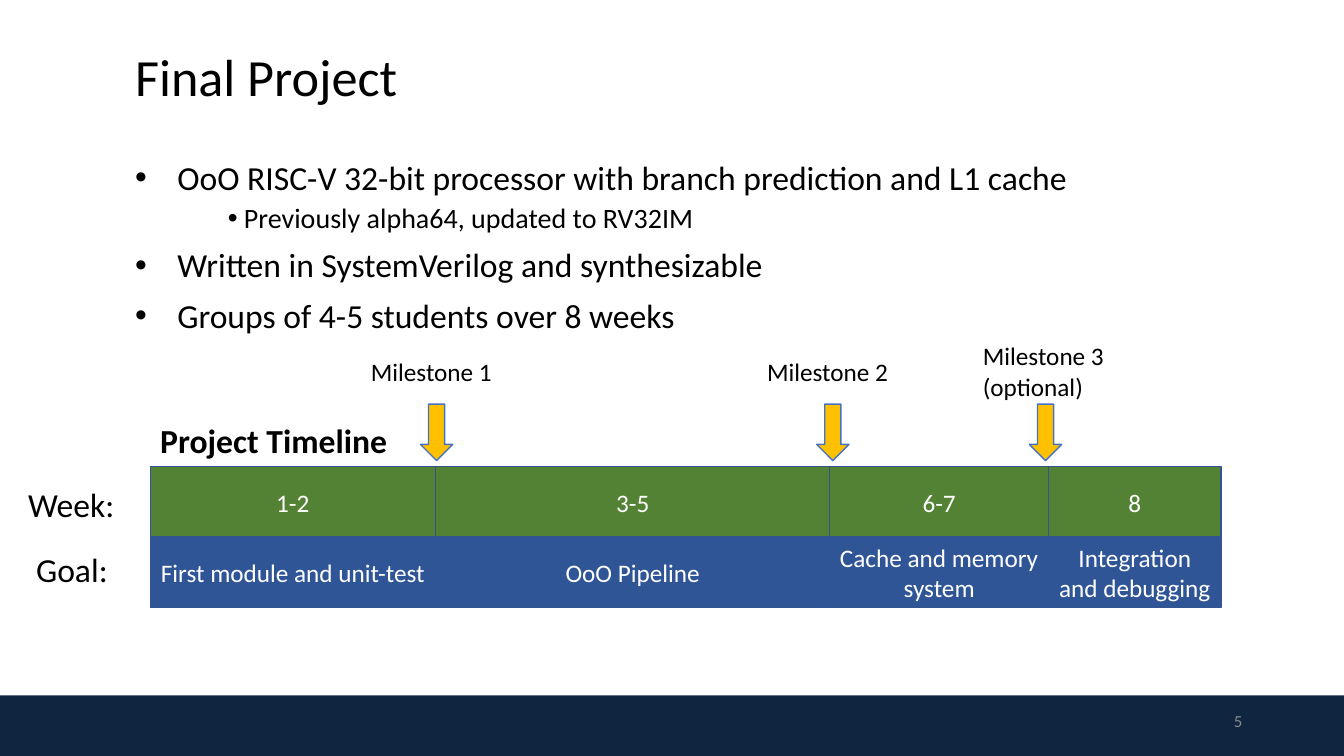
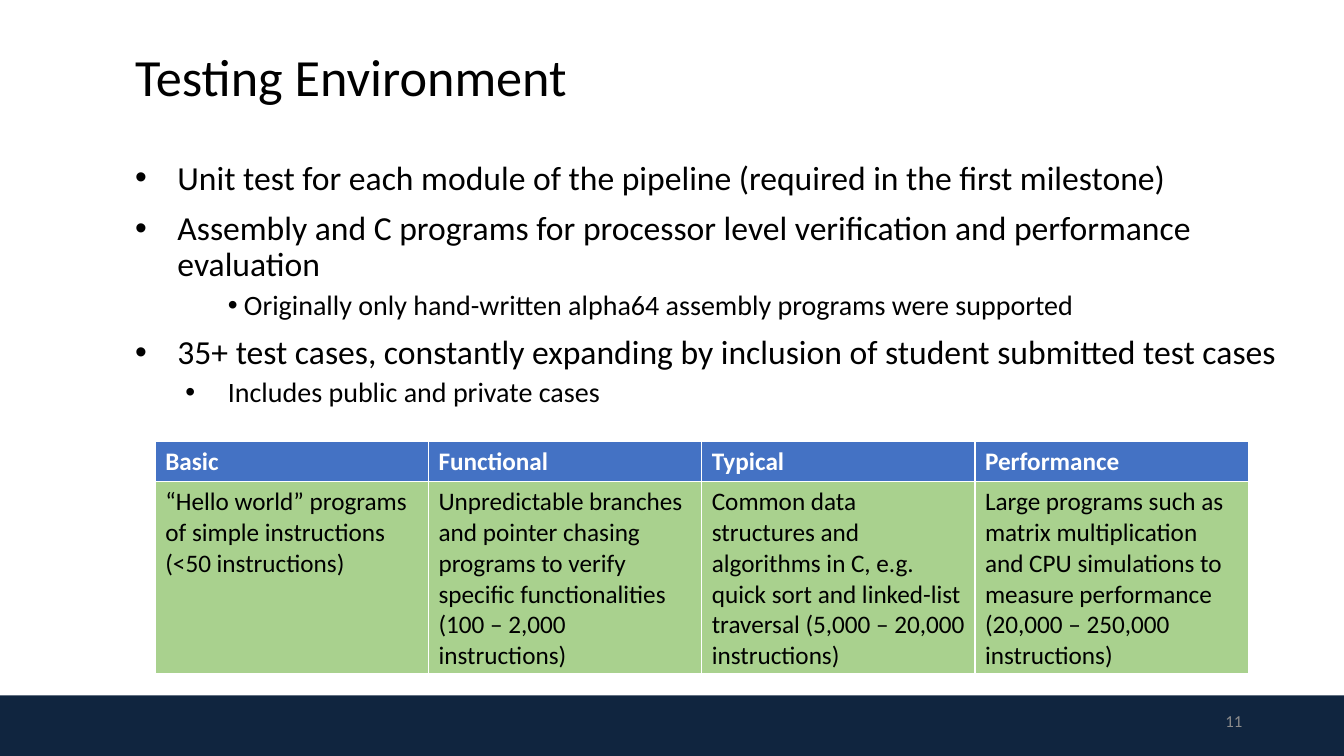
from lxml.etree import SubElement
from pptx import Presentation
from pptx.dml.color import RGBColor
from pptx.enum.shapes import MSO_SHAPE
from pptx.enum.text import MSO_ANCHOR, MSO_AUTO_SIZE, PP_ALIGN
from pptx.oxml.ns import qn
from pptx.util import Pt

EMU_PER_PX = 9144  # 100 px to the inch
FONT = "Calibri"
TITLE_ONLY = 5
COLORS = {
    "black": "000000", "white": "FFFFFF", "band": "10253F", "page": "8C8C8C",
    "week": "548235", "goal": "2F5597", "cell_line": "325491",
    "arrow": "FFC000", "blue": "4472C4", "table_body": "A9D18E",
}
# Bullet styles: left margin px, hanging px, size, space before
BULLETS = {
    "main": (42, 42, 24, 10),
    "sub": (92, 42, 20, 5),
    "tight": (108, 16, 20, 5),
}


def px(length):
    return length * EMU_PER_PX


def color(name):
    return RGBColor.from_string(COLORS[name])


def style(para, size, color_name="black", bold=False, align=PP_ALIGN.LEFT):
    para.alignment = align
    para.font.name = FONT
    para.font.size = Pt(size)
    para.font.bold = bold
    para.font.color.rgb = color(color_name)


def set_margins(frame, margin):
    frame.margin_left = frame.margin_right = px(margin)
    frame.margin_top = frame.margin_bottom = px(margin)


def add_text(slide, text, bounds, size, color_name="black", bold=False,
             align=PP_ALIGN.LEFT, anchor=MSO_ANCHOR.TOP):
    frame = slide.shapes.add_textbox(*map(px, bounds)).text_frame
    frame.word_wrap = True
    frame.vertical_anchor = anchor
    frame.text = text
    for para in frame.paragraphs:
        style(para, size, color_name, bold, align)


def add_block(slide, kind, bounds, fill, line=None, text=""):
    block = slide.shapes.add_shape(kind, *map(px, bounds))
    block.shadow.inherit = False
    block.fill.solid()
    block.fill.fore_color.rgb = color(fill)
    if line:
        block.line.color.rgb = color(line)
        block.line.width = Pt(1)
    else:
        block.line.fill.background()
    if text:
        frame = block.text_frame
        frame.word_wrap = True
        frame.vertical_anchor = MSO_ANCHOR.MIDDLE
        frame.text = text
        style(frame.paragraphs[0], 18, "white", align=PP_ALIGN.CENTER)


def add_page(deck, title, number):
    """Slide with the shared band, title and page number."""
    slide = deck.slides.add_slide(deck.slide_layouts[TITLE_ONLY])
    add_block(slide, MSO_SHAPE.RECTANGLE, (0, 690, 1334, 60), "band")
    box = slide.shapes.title
    box.left, box.top, box.width, box.height = map(px, (121, 36, 1171, 84))
    frame = box.text_frame
    frame.text = title
    frame.auto_size = MSO_AUTO_SIZE.NONE
    frame.vertical_anchor = MSO_ANCHOR.BOTTOM
    set_margins(frame, 13)
    frame.paragraphs[0].line_spacing = 0.9
    style(frame.paragraphs[0], 37.3)
    add_text(slide, str(number), (942, 695, 300, 40), 12, "page",
             align=PP_ALIGN.RIGHT, anchor=MSO_ANCHOR.MIDDLE)
    return slide


def add_bullets(slide, items):
    frame = slide.shapes.add_textbox(*map(px, (121, 147, 1171, 458))).text_frame
    frame.word_wrap = True
    set_margins(frame, 13)
    for index, (kind, text) in enumerate(items):
        margin, hanging, size, before = BULLETS[kind]
        para = frame.add_paragraph() if index else frame.paragraphs[0]
        para.text = text
        properties = para._p.get_or_add_pPr()
        properties.set("marL", str(px(margin)))
        properties.set("indent", str(-px(hanging)))
        SubElement(properties, qn("a:buFont")).set("typeface", "Arial")
        SubElement(properties, qn("a:buChar")).set("char", "•")
        para.line_spacing = 0.9
        para.space_before = Pt(before if index else 0)
        style(para, size)


def add_timeline(slide, phases):
    """Week cells above goal cells, with one column per phase."""
    top, height, left = 463, 70, 149
    for width, week, goal in phases:
        for row, (text, fill) in enumerate(((week, "week"), (goal, "goal"))):
            add_block(slide, MSO_SHAPE.RECTANGLE,
                      (left, top + row * height, width, height),
                      fill, "cell_line", text)
        left += width


def add_milestone(slide, arrow_left, label_left, label_top, text):
    add_block(slide, MSO_SHAPE.DOWN_ARROW, (arrow_left, 401, 32, 56),
              "arrow", "blue")
    add_text(slide, text, (label_left, label_top, 144, 40), 18)


def add_test_table(slide, columns):
    column_width, row_heights = 271, (40, 190)
    table = slide.shapes.add_table(
        2, len(columns), px(154), px(438),
        px(column_width * len(columns)), px(sum(row_heights))).table
    table.horz_banding = False
    for row, height in zip(table.rows, row_heights):
        row.height = px(height)
    looks = (("blue", "white", True), ("table_body", "black", False))
    for column, texts in enumerate(columns):
        table.columns[column].width = px(column_width)
        for row, (text, (fill, ink, bold)) in enumerate(zip(texts, looks)):
            cell = table.cell(row, column)
            cell.fill.solid()
            cell.fill.fore_color.rgb = color(fill)
            cell.text = text
            for para in cell.text_frame.paragraphs:
                style(para, 18, ink, bold)


def build_project(deck):
    slide = add_page(deck, "Final Project", 5)
    add_bullets(slide, [
        ("main", "OoO RISC-V 32-bit processor with branch prediction and L1 cache"),
        ("tight", "Previously alpha64, updated to RV32IM"),
        ("main", "Written in SystemVerilog and synthesizable"),
        ("main", "Groups of 4-5 students over 8 weeks"),
    ])
    # Timeline and its labels
    add_timeline(slide, [
        (283, "1-2", "First module and unit-test"),
        (391, "3-5", "OoO Pipeline"),
        (217, "6-7", "Cache and memory system"),
        (171, "8", "Integration and debugging"),
    ])
    add_text(slide, "Project Timeline", (149, 412, 255, 50), 24, bold=True)
    add_text(slide, "Week:", (18, 475, 115, 50), 24)
    add_text(slide, "Goal:", (26, 540, 100, 50), 24)
    # Milestones
    for milestone in (
        (417, 358, 349, "Milestone 1"),
        (810, 751, 349, "Milestone 2"),
        (1021, 965, 333, "Milestone 3\n(optional)"),
    ):
        add_milestone(slide, *milestone)


def build_testing(deck):
    slide = add_page(deck, "Testing Environment", 11)
    add_bullets(slide, [
        ("main", "Unit test for each module of the pipeline (required in the first milestone)"),
        ("main", "Assembly and C programs for processor level verification "
                 "and performance evaluation"),
        ("tight", "Originally only hand-written alpha64 assembly programs were supported"),
        ("main", "35+ test cases, constantly expanding by inclusion of "
                 "student submitted test cases"),
        ("sub", "Includes public and private cases"),
    ])
    add_test_table(slide, [
        ("Basic", "“Hello world” programs of simple instructions\n(<50 instructions)"),
        ("Functional", "Unpredictable branches and pointer chasing programs to verify "
                       "specific functionalities\n(100 – 2,000 instructions)"),
        ("Typical", "Common data structures and algorithms in C, e.g. quick sort and "
                    "linked-list traversal (5,000 – 20,000 instructions)"),
        ("Performance", "Large programs such as matrix multiplication and CPU simulations "
                        "to measure performance\n(20,000 – 250,000 instructions)"),
    ])


def main():
    deck = Presentation()
    deck.slide_width, deck.slide_height = px(1333), px(750)
    build_project(deck)
    build_testing(deck)
    deck.save("out.pptx")


if __name__ == "__main__":
    main()
